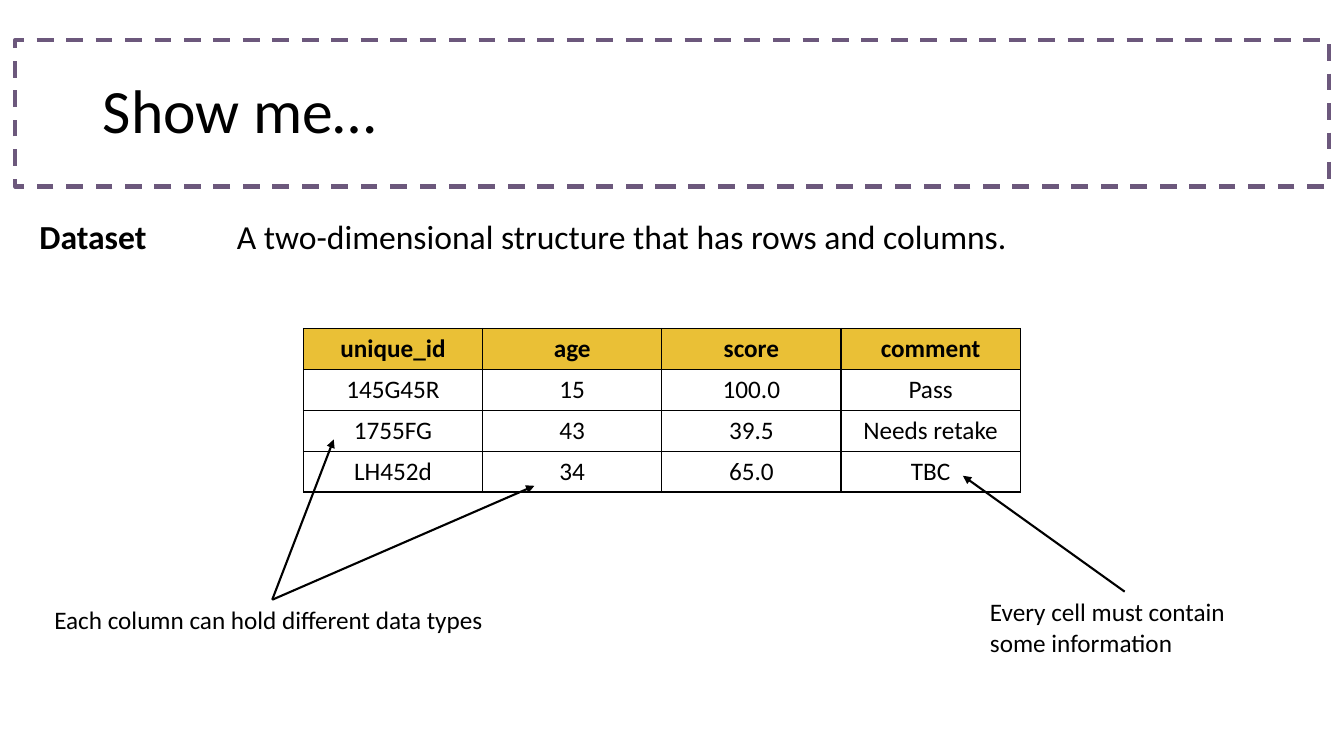
from dataclasses import dataclass

import pptx
import pptx.dml.color
import pptx.enum.dml
import pptx.enum.shapes
import pptx.enum.text
import pptx.oxml
import pptx.oxml.ns
import pptx.util

Inches = pptx.util.Inches
Pt = pptx.util.Pt
RGB = pptx.dml.color.RGBColor.from_string
ANCHOR = pptx.enum.text.MSO_ANCHOR
ALIGN = pptx.enum.text.PP_ALIGN


@dataclass(frozen=True)
class Theme:
    font: str = "Calibri"
    ink: str = "000000"
    paper: str = "FFFFFF"
    header: str = "EAC036"
    frame: str = "6C587C"
    title_size: int = 44
    definition_size: int = 24
    body_size: int = 18


THEME = Theme()

RECORDS = [
    ["unique_id", "age", "score", "comment"],
    ["145G45R", "15", "100.0", "Pass"],
    ["1755FG", "43", "39.5", "Needs retake"],
    ["LH452d", "34", "65.0", "TBC"],
]


def write(text_frame, text, size, bold=False, align=ALIGN.LEFT):
    text_frame.word_wrap = True
    para = text_frame.paragraphs[0]
    para.alignment = align
    span = para.add_run()
    span.text = text
    font_format = {"name": THEME.font, "size": Pt(size), "bold": bold}
    for name, value in font_format.items():
        setattr(span.font, name, value)
    span.font.color.rgb = RGB(THEME.ink)
    return para


def add_title(page, left, top, width, height):
    """Place the title inside a dashed frame that fills the given box."""
    title = page.shapes.title
    place = {"left": left + 0.77, "top": top, "width": 11.5, "height": height}
    for name, value in place.items():
        setattr(title, name, Inches(value))
    title.text_frame.vertical_anchor = ANCHOR.MIDDLE
    write(title.text_frame, "Show me…", THEME.title_size).line_spacing = 0.9

    frame = page.shapes.add_shape(
        pptx.enum.shapes.MSO_SHAPE.RECTANGLE,
        *map(Inches, (left, top, width, height)))
    frame.shadow.inherit = False
    frame.fill.background()
    frame.line.color.rgb = RGB(THEME.frame)
    frame.line.width = Pt(3)
    frame.line.dash_style = pptx.enum.dml.MSO_LINE.DASH
    title.element.addprevious(frame.element)


def add_plain_table(page, rows, columns, left, top, width, height):
    table = page.shapes.add_table(
        rows, columns, *map(Inches, (left, top, width, height))).table
    table.first_row = False
    table.horz_banding = False
    return table


def add_definition(page, left, top, width, height):
    table = add_plain_table(page, 1, 2, left, top, width, height)
    term_width = 1.96
    table.columns[0].width = Inches(term_width)
    table.columns[1].width = Inches(width - term_width)
    term, meaning = table.rows[0].cells
    for cell in (term, meaning):
        cell.fill.background()
    meaning.vertical_anchor = ANCHOR.MIDDLE
    write(term.text_frame, "Dataset", THEME.definition_size, bold=True)
    write(meaning.text_frame,
          "A two-dimensional structure that has rows and columns.\u00a0",
          THEME.definition_size)


def border_cell(cell):
    properties = cell._tc.get_or_add_tcPr()
    for index, side in enumerate(("lnL", "lnR", "lnT", "lnB")):
        properties.insert(index, pptx.oxml.parse_xml(
            f'<a:{side} {pptx.oxml.ns.nsdecls("a")} w="{Pt(1)}"><a:solidFill>'
            f'<a:srgbClr val="{THEME.ink}"/></a:solidFill></a:{side}>'))


def add_dataset(page, left, top, width, height):
    table = add_plain_table(
        page, len(RECORDS), len(RECORDS[0]), left, top, width, height)
    for row, record in enumerate(RECORDS):
        heading = row == 0
        for column, value in enumerate(record):
            cell = table.cell(row, column)
            cell.fill.solid()
            cell.fill.fore_color.rgb = RGB(
                THEME.header if heading else THEME.paper)
            border_cell(cell)
            write(cell.text_frame, value, THEME.body_size,
                  bold=heading, align=ALIGN.CENTER)


def add_note(page, text, left, top, width, height):
    note = page.shapes.add_textbox(*map(Inches, (left, top, width, height)))
    note.text_frame.auto_size = pptx.enum.text.MSO_AUTO_SIZE.SHAPE_TO_FIT_TEXT
    write(note.text_frame, text, THEME.body_size)
    return note


def add_arrow(page, start, end):
    arrow = page.shapes.add_connector(
        pptx.enum.shapes.MSO_CONNECTOR.STRAIGHT, *map(Inches, start + end))
    arrow.line.color.rgb = RGB(THEME.ink)
    arrow.line.width = Pt(1.5)
    namespace = pptx.oxml.ns.nsdecls("a")
    arrow.line._get_or_add_ln().append(
        pptx.oxml.parse_xml(f'<a:tailEnd {namespace} type="triangle"/>'))
    arrow.element.spPr.append(
        pptx.oxml.parse_xml(f"<a:effectLst {namespace}/>"))
    return arrow


def add_cell_note(page, left, top, width, height):
    note = add_note(page, "Every cell must contain some information",
                    left, top, width, height)
    arrow = add_arrow(page, (left + width / 2, top), (left - 0.17, top - 1.15))
    arrow.begin_connect(note, 0)


def add_column_note(page, left, top, width, height):
    add_note(page, "Each column can hold different data types",
             left, top, width, height)
    start = (left + 2.26, top)
    for across, up in ((0.61, 1.59), (2.6, 1.13)):
        add_arrow(page, start, (start[0] + across, top - up))


def main():
    deck = pptx.Presentation()
    deck.slide_width = Inches(13.33)
    deck.slide_height = Inches(7.5)
    page = deck.slides.add_slide(deck.slide_layouts.get_by_name("Title Only"))
    add_title(page, 0.15, 0.4, 13.03, 1.45)
    add_definition(page, 0.29, 2.11, 12.7, 0.49)
    add_dataset(page, 3.01, 3.26, 7.11, 1.62)
    add_cell_note(page, 9.72, 5.87, 2.87, 0.71)
    add_column_note(page, 0.44, 5.95, 6.67, 0.4)
    deck.save("out.pptx")


if __name__ == "__main__":
    main()
